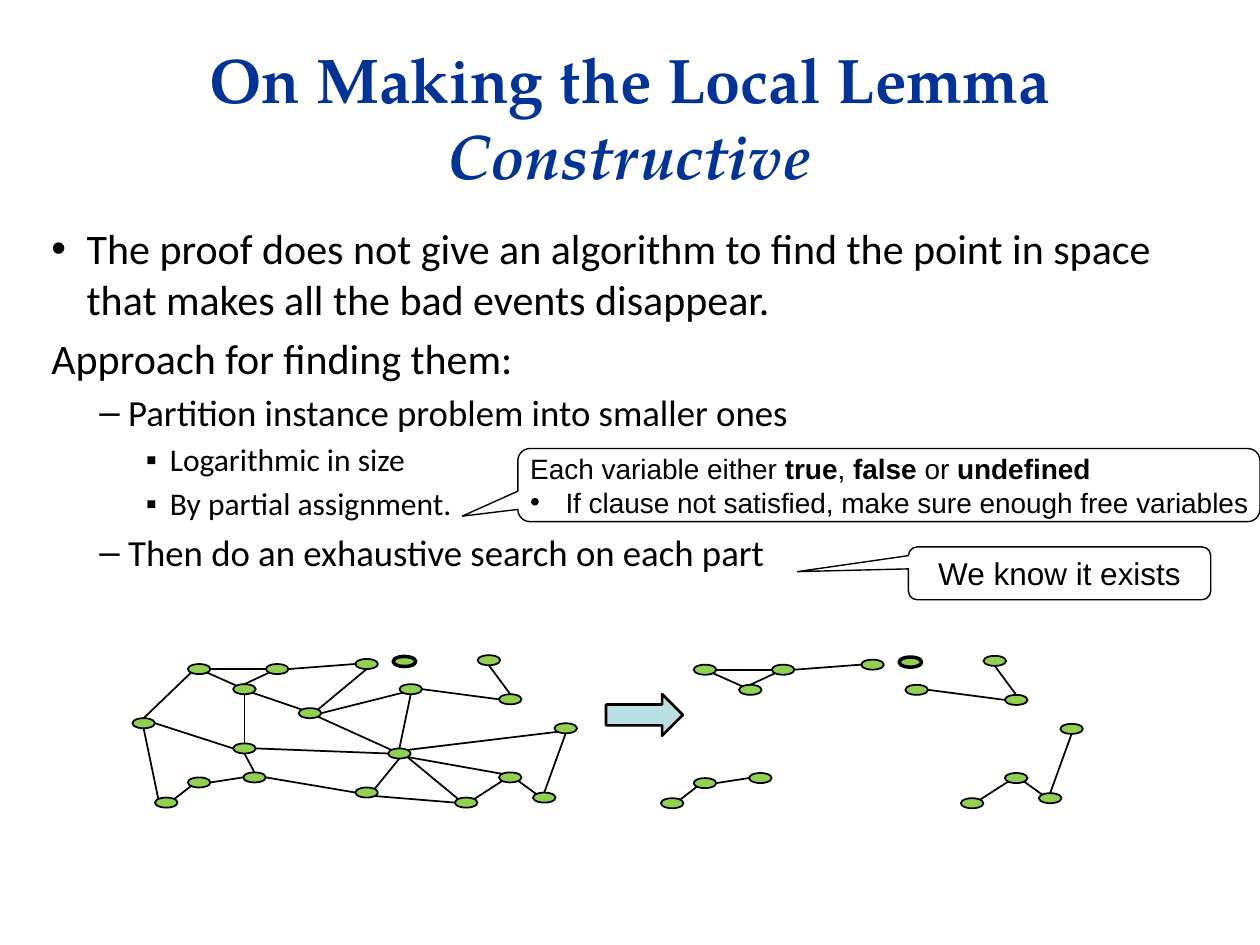
import pptx
import pptx.util
import pptx.dml.color
import pptx.enum.shapes
import pptx.enum.text
import pptx.oxml.ns
import lxml.etree

RGB = pptx.dml.color.RGBColor
BLUE = RGB(0x00, 0x33, 0x99)
BLACK = RGB(0x00, 0x00, 0x00)
GREEN = RGB(0x92, 0xD0, 0x50)
TEAL = RGB(0xBB, 0xE0, 0xE3)

KIND = pptx.enum.shapes.MSO_SHAPE
ALIGN = pptx.enum.text.PP_ALIGN
MID = pptx.enum.text.MSO_ANCHOR.MIDDLE
Pt = pptx.util.Pt
qn = pptx.oxml.ns.qn

# The slide is a grid of 100 columns by 75 rows
WIDE = pptx.util.Inches(10)
HIGH = pptx.util.Inches(7.5)
CELL = WIDE / 100

# Level: text size, left margin, first-line indent, bullet
LEVELS = {
    "main": (24, 2.8, -2.8, "•"),
    "plain": (24, 0, 0, None),
    "dash": (21, 6.1, -2.3, "–"),
    "square": (18, 9.4, -1.9, "▪"),
}
BODY = [
    ("main", "The proof does not give an algorithm to find the point in space "
             "that makes all the bad events disappear."),
    ("plain", "Approach for finding them:"),
    ("dash", "Partition instance problem into smaller ones"),
    ("square", "Logarithmic in size"),
    ("square", "By partial assignment."),
    ("dash", "Then do an exhaustive search on each part"),
]

# Graph nodes: column and row inside the graph's box
NODES = {
    "a": (4.4, 0.7), "b": (10.6, 0.7), "c": (8, 2.3), "d": (1.8, 11.3),
    "e": (4.4, 9.7), "f": (8.8, 9.3), "g": (29.1, 3.1), "h": (27.4, 0),
    "i": (21.2, 2.3), "j": (25.6, 11.3), "k": (31.8, 10.9), "l": (29.1, 9.3),
    "m": (8, 7), "n": (13.2, 4.2), "o": (0, 5), "p": (20.3, 7.4),
    "q": (33.5, 5.4), "r": (17.7, 10.5), "s": (17.7, 0.3), "t": (20.7, 0.1),
}
NODE_W, NODE_H = 1.8, 0.8
LONE = "t"
FIXED = "mnopr"  # nodes that drop out after the partial assignment

# Where an edge meets a node, as shares of the node's size
PORTS = {
    "n": (0.5, 0), "s": (0.5, 1), "w": (0, 0.5), "e": (1, 0.5),
    "nw": (0.15, 0.15), "ne": (0.85, 0.15),
    "sw": (0.15, 0.85), "se": (0.85, 0.85),
}
# Each edge is node.port-node.port
EDGES = """
    q.s-k.n a.se-c.nw c.n-b.sw i.e-g.w h.s-g.n l.sw-j.ne l.se-k.nw e.e-f.w
    e.sw-d.ne s.w-b.e a.e-b.w o.s-d.nw m.w-o.e c.s-m.n c.se-n.nw m.s-f.n
    n.e-i.sw n.se-p.nw p.s-r.ne q.sw-p.ne l.nw-p.se j.w-r.se s.s-n.ne
    p.w-m.e p.n-i.s a.sw-o.n r.w-f.e j.nw-p.se
""".split()


def grid(*cells):
    return [round(cell * CELL) for cell in cells]


def put(part, **vals):
    for name, val in vals.items():
        setattr(part, name, val)


def write(para, text, **font):
    run = para.add_run()
    run.text = text
    run.font.color.rgb = font.pop("color", BLACK)
    put(run.font, **font)


def bullet(para, left, first, mark):
    props = para._p.get_or_add_pPr()
    for name, size in zip(("marL", "indent"), grid(left, first)):
        props.set(name, str(size))
    if mark:
        lxml.etree.SubElement(props, qn("a:buFont"), typeface="Arial")
        lxml.etree.SubElement(props, qn("a:buChar"), char=mark)


def shape(slide, kind, box, fill=None, weight=1):
    item = slide.shapes.add_shape(kind, *grid(*box))
    item.shadow.inherit = False
    if fill is None:
        item.fill.background()
    else:
        item.fill.solid()
        item.fill.fore_color.rgb = fill
    item.line.color.rgb = BLACK
    item.line.width = Pt(weight)
    return item


def title(slide, box):
    frame = slide.shapes.add_textbox(*grid(*box)).text_frame
    put(frame, word_wrap=True, vertical_anchor=MID)
    para = frame.paragraphs[0]
    para.alignment = ALIGN.CENTER
    font = dict(name="TeX Gyre Pagella", size=Pt(36), bold=True, color=BLUE)
    write(para, "On Making the Local Lemma ", **font)
    write(para, "Constructive", italic=True, **font)


def body(slide, box):
    frame = slide.shapes.add_textbox(*grid(*box)).text_frame
    frame.word_wrap = True
    for at, (level, text) in enumerate(BODY):
        para = frame.add_paragraph() if at else frame.paragraphs[0]
        size, *marks = LEVELS[level]
        put(para, alignment=ALIGN.LEFT, space_before=Pt(size * 0.2))
        bullet(para, *marks)
        write(para, text, name="Calibri", size=Pt(size))


def callout(slide, box, tip):
    item = shape(slide, KIND.ROUNDED_RECTANGULAR_CALLOUT, box, weight=0.8)
    for at, val in enumerate((*tip, 0.167)):
        item.adjustments[at] = val
    side, edge = grid(0.7, 0.4)
    put(item.text_frame, word_wrap=False, vertical_anchor=MID,
        margin_left=side, margin_right=side,
        margin_top=edge, margin_bottom=edge)
    return item.text_frame


def exists(slide, box):
    para = callout(slide, box, (-0.867, -0.032)).paragraphs[0]
    para.alignment = ALIGN.CENTER
    write(para, "We know it exists", name="Arial", size=Pt(18))


def values(slide, box):
    frame = callout(slide, box, (-0.575, 0.425))
    font = dict(name="Arial", size=Pt(16))
    para = frame.paragraphs[0]
    para.alignment = ALIGN.LEFT
    parts = ("Each variable either ", "true", ", ", "false", " or ", "undefined")
    for at, text in enumerate(parts):
        write(para, text, bold=at % 2 == 1, **font)
    para = frame.add_paragraph()
    para.alignment = ALIGN.LEFT
    bullet(para, 2.8, -2.8, "•")
    write(para, "If clause not satisfied, make sure enough free variables ", **font)


def graph(slide, left, top, drop=""):
    # Nodes
    for name, (col, row) in NODES.items():
        if name not in drop:
            shape(slide, KIND.OVAL, (left + col, top + row, NODE_W, NODE_H),
                  GREEN, 2 if name == LONE else 1)
    # Edges between the nodes that stay
    for edge in EDGES:
        ends = [end.split(".") for end in edge.split("-")]
        if any(name in drop for name, port in ends):
            continue
        spots = []
        for name, port in ends:
            (col, row), (across, down) = NODES[name], PORTS[port]
            spots += grid(left + col + across * NODE_W, top + row + down * NODE_H)
        line = slide.shapes.add_connector(
            pptx.enum.shapes.MSO_CONNECTOR.STRAIGHT, *spots)
        line.line.color.rgb = BLACK
        line.line.width = Pt(1)
        lxml.etree.SubElement(line._element.spPr, qn("a:effectLst"))


def main():
    deck = pptx.Presentation()
    put(deck, slide_width=WIDE, slide_height=HIGH)
    slide = deck.slides.add_slide(deck.slide_layouts[6])
    title(slide, (5, 3, 90, 12.5))
    body(slide, (3.1, 17.2, 90, 40.7))
    exists(slide, (72.1, 43.4, 24, 4.2))
    values(slide, (41.1, 35.6, 58.9, 5.8))
    graph(slide, 10.5, 52)
    graph(slide, 50.65, 52.05, FIXED)
    shape(slide, KIND.RIGHT_ARROW, (48.1, 55.1, 6.1, 3.3), TEAL, 1.5)
    deck.save("out.pptx")


if __name__ == "__main__":
    main()
